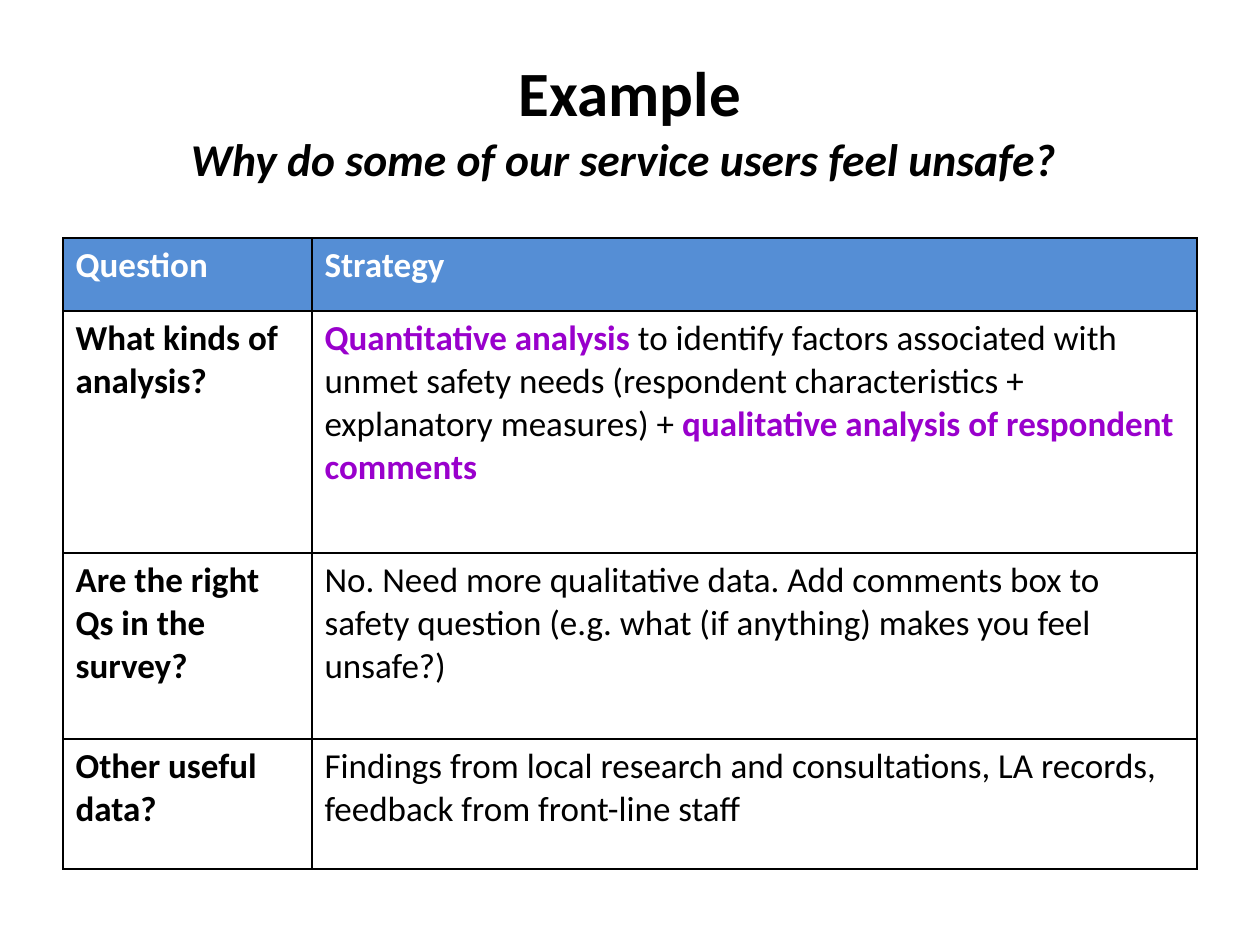
"""Build a slide with a table of analysis strategies for a survey question."""
from lxml import etree
from pptx import Presentation, util as u
from pptx.dml.color import RGBColor
from pptx.enum import text
from pptx.oxml.ns import qn

BLACK = RGBColor(0x00, 0x00, 0x00)
WHITE = RGBColor(0xFF, 0xFF, 0xFF)
BLUE = RGBColor(0x55, 0x8E, 0xD5)
PURPLE = RGBColor(0x99, 0x00, 0xCC)


def px(n):
    return u.Emu(round(n * 914400 / 126))


def write(tf, runs, size=20, color=BLACK, bold=False, italic=False, align=None, gap=12):
    tf.word_wrap = True
    p = tf.paragraphs[0]
    p.alignment = align
    p.space_before = p.space_after = u.Pt(gap)
    for content, accent in [(runs, None)] if isinstance(runs, str) else runs:
        r = p.add_run()
        r.text = content
        r.font.name = "Calibri"
        r.font.size = u.Pt(size)
        r.font.bold = bold or accent is not None
        r.font.italic = italic
        r.font.color.rgb = accent or color


prs = Presentation()
prs.slide_width, prs.slide_height = px(1260), px(945)
s = prs.slides.add_slide(prs.slide_layouts[6])

title = s.shapes.add_textbox(px(63), px(38), px(1134), px(107)).text_frame
title.vertical_anchor = text.MSO_ANCHOR.MIDDLE
write(title, "Example", size=36, bold=True, align=text.PP_ALIGN.CENTER, gap=0)

subtitle = s.shapes.add_textbox(px(44), px(125), px(1160), px(79)).text_frame
write(subtitle, "Why do some of our service users feel unsafe?",
      size=26, bold=True, italic=True, align=text.PP_ALIGN.CENTER)

rows = [
    ("Question", "Strategy"),
    ("What kinds of analysis?", [
        ("Quantitative analysis", PURPLE),
        (" to identify factors associated with unmet safety needs "
         "(respondent characteristics + explanatory measures) + ", None),
        ("qualitative analysis of respondent comments", PURPLE)]),
    ("Are the right Qs in the survey?",
     "No. Need more qualitative data. Add comments box to safety question "
     "(e.g. what (if anything) makes you feel unsafe?)"),
    ("Other useful data?",
     "Findings from local research and consultations, LA records, "
     "feedback from front-line staff"),
]
widths = [249, 885]
heights = [73, 242, 186, 130]

table = s.shapes.add_table(len(rows), len(widths), px(63), px(238),
                           px(sum(widths)), px(sum(heights))).table
table.horz_banding = False
for column, width in zip(table.columns, widths):
    column.width = px(width)
for row, height in zip(table.rows, heights):
    row.height = px(height)

for i, row in enumerate(rows):
    for j, content in enumerate(row):
        cell = table.cell(i, j)
        header = i == 0
        write(cell.text_frame, content, color=WHITE if header else BLACK,
              bold=header or j == 0)
        tcPr = cell._tc.get_or_add_tcPr()
        for side in ("lnL", "lnR", "lnT", "lnB"):
            ln = etree.SubElement(tcPr, qn(f"a:{side}"), w=str(u.Pt(1)))
            fill = etree.SubElement(ln, qn("a:solidFill"))
            etree.SubElement(fill, qn("a:srgbClr"), val=str(BLACK))
        if header:
            cell.fill.solid()
            cell.fill.fore_color.rgb = BLUE
        else:
            cell.fill.background()

prs.save("out.pptx")
